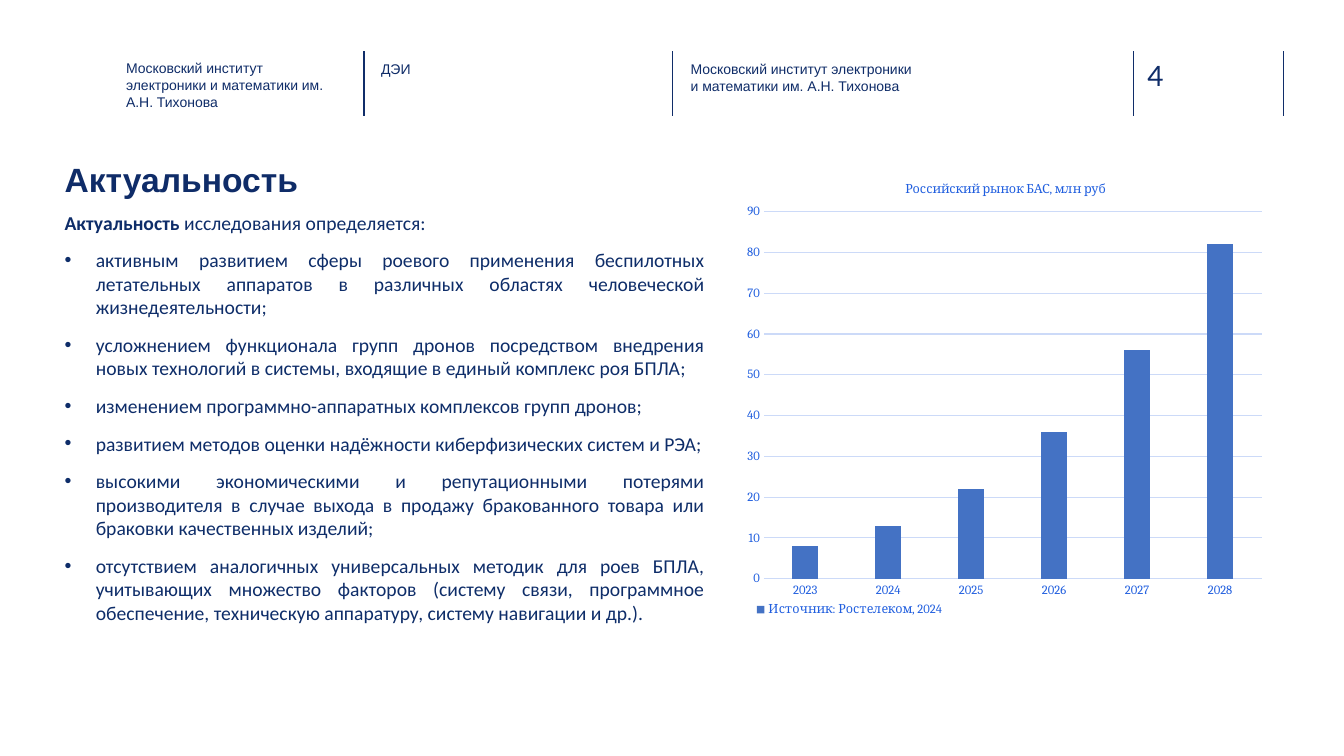
import pptx
import pptx.chart.data
import pptx.dml.color
import pptx.enum.chart
import pptx.enum.shapes
import pptx.enum.text
import pptx.oxml.ns
import pptx.oxml.xmlchemy
import pptx.util
from dataclasses import dataclass

Inches = pptx.util.Inches
Pt = pptx.util.Pt


@dataclass(frozen=True)
class Theme:
    """Colours, fonts and type sizes of the deck."""
    rule: str = "102D69"
    heading: str = "0F2C68"
    text: str = "0E2D69"
    chart_text: str = "215FDF"
    grid: str = "CCDAF8"
    bar: str = "4472C4"
    heading_font: str = "Arial"
    body_font: str = "Calibri"
    number_font: str = "Lato"
    chart_font: str = "Cambria"
    title_size: int = 24
    number_size: int = 20
    body_size: int = 14
    header_size: int = 10
    chart_size: int = 9


THEME = Theme()
INSTITUTE = "Московский институт электроники и математики им. А.Н. Тихонова"
REASONS = [
    "активным развитием сферы роевого применения беспилотных летательных аппаратов в различных областях человеческой жизнедеятельности;",
    "усложнением функционала групп дронов посредством внедрения новых технологий в системы, входящие в единый комплекс роя БПЛА;",
    "изменением программно-аппаратных комплексов групп дронов;",
    "развитием методов оценки надёжности киберфизических систем и РЭА;",
    "высокими экономическими и репутационными потерями производителя в случае выхода в продажу бракованного товара или браковки качественных изделий;",
    "отсутствием аналогичных универсальных методик для роев БПЛА, учитывающих множество факторов (систему связи, программное обеспечение, техническую аппаратуру, систему навигации и др.).",
]
MARKET = {"2023": 8, "2024": 13, "2025": 22, "2026": 36, "2027": 56, "2028": 82}


def rgb(colour):
    """Turn a hex string into a colour object."""
    return pptx.dml.color.RGBColor.from_string(colour)


def make_element(tag, **attributes):
    """Create an XML element with the given attributes."""
    element = pptx.oxml.xmlchemy.OxmlElement(tag)
    for name, value in attributes.items():
        element.set(name, str(value))
    return element


def style_font(font, name, size, colour, bold=False):
    """Set the typeface, size, colour and weight of a font."""
    font.name, font.size, font.bold = name, Pt(size), bold
    font.color.rgb = rgb(colour)


def prepare_frame(text_frame):
    """Make a text frame wrap, without margins, from its top edge."""
    text_frame.word_wrap = True
    text_frame.auto_size = pptx.enum.text.MSO_AUTO_SIZE.NONE
    text_frame.vertical_anchor = pptx.enum.text.MSO_ANCHOR.TOP
    text_frame.margin_left = text_frame.margin_right = 0
    text_frame.margin_top = text_frame.margin_bottom = 0


def add_text(slide, left, top, width, height):
    """Add an empty text box and return its text frame."""
    shape = slide.shapes.add_textbox(Inches(left), Inches(top), Inches(width), Inches(height))
    prepare_frame(shape.text_frame)
    return shape.text_frame


def add_header(slide, left, top, height):
    """Place the header's rules, captions and slide number."""
    for offset in (2.36, 5.42, 9.99, 11.48):
        x = Inches(left + offset)
        rule = slide.shapes.add_connector(
            pptx.enum.shapes.MSO_CONNECTOR.STRAIGHT, x, Inches(top), x, Inches(top + height))
        rule.line.color.rgb = rgb(THEME.rule)
        rule.line.width = Pt(1)
        rule._element.spPr.append(make_element("a:effectLst"))
    captions = [
        (0, 0.08, 2.08, INSTITUTE, THEME.heading_font, THEME.header_size),
        (2.53, 0.09, 2.26, "ДЭИ", THEME.heading_font, THEME.header_size),
        (5.6, 0.09, 2.26, INSTITUTE, THEME.heading_font, THEME.header_size),
        (10.13, 0.07, 0.73, "4", THEME.number_font, THEME.number_size),
    ]
    for offset, drop, width, text, font, size in captions:
        text_frame = add_text(slide, left + offset, top + drop, width, 0.45)
        text_frame.text = text
        style_font(text_frame.paragraphs[0].runs[0].font, font, size, THEME.heading)


def add_title(slide, left, top, width, height):
    """Move and format the title placeholder."""
    title = slide.shapes.title
    title.left, title.top = Inches(left), Inches(top)
    title.width, title.height = Inches(width), Inches(height)
    prepare_frame(title.text_frame)
    title.text_frame.text = "Актуальность"
    paragraph = title.text_frame.paragraphs[0]
    paragraph.alignment = pptx.enum.text.PP_ALIGN.LEFT
    style_font(paragraph.runs[0].font, THEME.heading_font, THEME.title_size, THEME.heading, True)


def add_bullet(paragraph):
    """Give a paragraph a hanging bullet."""
    properties = paragraph._p.get_or_add_pPr()
    properties.set("marL", str(Inches(0.31)))
    properties.set("indent", str(-Inches(0.31)))
    properties.append(make_element("a:buFont", typeface="Arial"))
    properties.append(make_element("a:buChar", char="•"))


def add_reasons(slide, left, top, width, height):
    """Place the lead line and the bulleted reasons."""
    text_frame = add_text(slide, left, top, width, height)
    lead = text_frame.paragraphs[0]
    lead.alignment = pptx.enum.text.PP_ALIGN.JUSTIFY
    for text, bold in (("Актуальность", True), (" исследования определяется:", False)):
        run = lead.add_run()
        run.text = text
        style_font(run.font, THEME.body_font, THEME.body_size, THEME.text, bold)
    for reason in REASONS:
        paragraph = text_frame.add_paragraph()
        paragraph.text = reason
        paragraph.alignment = pptx.enum.text.PP_ALIGN.JUSTIFY
        paragraph.space_before = Pt(10)
        add_bullet(paragraph)
        style_font(paragraph.runs[0].font, THEME.body_font, THEME.body_size, THEME.text)


def set_layout(element, position, predecessor=None, inner=False):
    """Fix a chart part at fractions of the chart's size."""
    for previous in element.findall(pptx.oxml.ns.qn("c:layout")):
        element.remove(previous)
    layout = make_element("c:layout")
    manual = make_element("c:manualLayout")
    layout.append(manual)
    settings = [("layoutTarget", "inner")] if inner else []
    settings += [("xMode", "edge"), ("yMode", "edge"), *zip("xywh", position)]
    for name, value in settings:
        manual.append(make_element(f"c:{name}", val=value))
    if predecessor:
        element.find(pptx.oxml.ns.qn(predecessor)).addnext(layout)
    else:
        element.insert(0, layout)


def add_market_chart(slide, left, top, width, height):
    """Place the column chart of the market by year."""
    data = pptx.chart.data.CategoryChartData()
    data.categories = list(MARKET)
    data.add_series("Источник: Ростелеком, 2024", list(MARKET.values()))
    chart = slide.shapes.add_chart(
        pptx.enum.chart.XL_CHART_TYPE.COLUMN_CLUSTERED,
        Inches(left), Inches(top), Inches(width), Inches(height), data).chart
    chart_style = (THEME.chart_font, THEME.chart_size, THEME.chart_text)
    style_font(chart.font, *chart_style)
    chart.has_title = True
    title_frame = chart.chart_title.text_frame
    title_frame.text = "Российский рынок БАС, млн руб"
    style_font(title_frame.paragraphs[0].runs[0].font, *chart_style)
    chart.has_legend = True
    chart.legend.position = pptx.enum.chart.XL_LEGEND_POSITION.BOTTOM
    chart.legend.include_in_layout = False
    style_font(chart.legend.font, *chart_style)
    plot = chart.plots[0]
    plot.gap_width, plot.overlap, plot.vary_by_categories = 219, -27, False
    fill = plot.series[0].format.fill
    fill.solid()
    fill.fore_color.rgb = rgb(THEME.bar)
    value_axis, category_axis = chart.value_axis, chart.category_axis
    value_axis.minimum_scale, value_axis.maximum_scale, value_axis.major_unit = 0, 90, 10
    for axis in (value_axis, category_axis):
        axis.major_tick_mark = axis.minor_tick_mark = pptx.enum.chart.XL_TICK_MARK.NONE
        style_font(axis.tick_labels.font, *chart_style)
    value_axis.format.line.fill.background()
    for line in (value_axis.major_gridlines.format.line, category_axis.format.line):
        line.color.rgb = rgb(THEME.grid)
        line.width = Pt(0.75)
    set_layout(chart.chart_title._element, (0.31, 0.04), "c:tx")
    set_layout(chart.legend._element, (0.01, 0.92, 0.4, 0.05), "c:legendPos")
    set_layout(chart._chartSpace.chart.plotArea, (0.05, 0.11, 0.93, 0.77), inner=True)


def main():
    """Build the slide and save the presentation."""
    presentation = pptx.Presentation()
    presentation.slide_width, presentation.slide_height = Inches(13.33), Inches(7.5)
    slide = presentation.slides.add_slide(presentation.slide_layouts[5])
    add_header(slide, 1.25, 0.51, 0.64)
    add_title(slide, 0.64, 1.58, 5.74, 0.45)
    add_reasons(slide, 0.64, 2.09, 6.35, 4.2)
    add_market_chart(slide, 7.31, 1.58, 5.31, 4.73)
    presentation.save("out.pptx")


if __name__ == "__main__":
    main()
